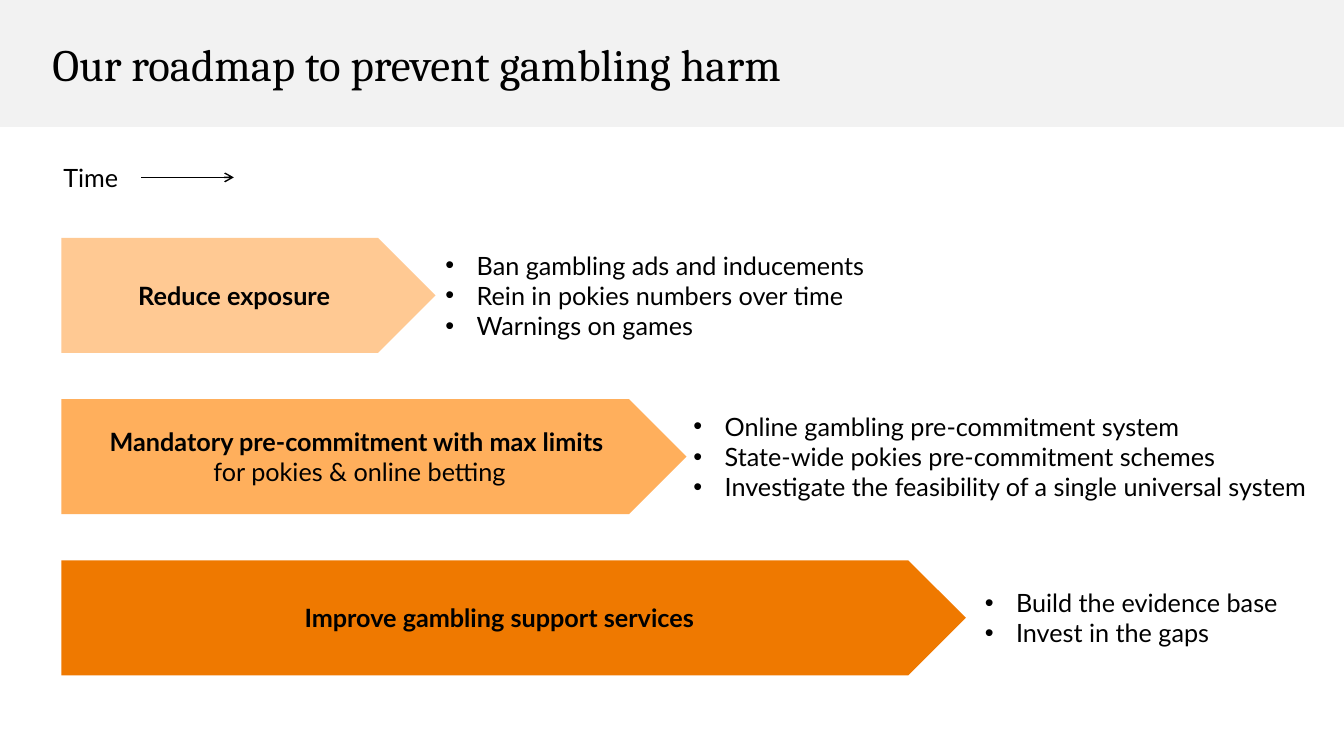
from dataclasses import dataclass

from lxml.etree import SubElement
from pptx import Presentation
from pptx.dml.color import RGBColor
from pptx.enum.shapes import MSO_CONNECTOR, MSO_SHAPE
from pptx.enum.text import MSO_ANCHOR, PP_ALIGN
from pptx.oxml.ns import qn
from pptx.util import Inches, Pt


@dataclass(frozen=True)
class Theme:
    text: str = "000000"
    band: str = "F2F2F2"
    stages: tuple = ("FFC993", "FFAF5C", "EF7900")
    title_font: str = "Cambria"
    body_font: str = "Lato"
    title_size: int = 32
    body_size: int = 18


THEME = Theme()

# Arrow width, gap before the actions, actions width, label lines, actions
STAGES = [
    (3.71, 0, 4.7, ["Reduce exposure"],
     ["Ban gambling ads and inducements",
      "Rein in pokies numbers over time",
      "Warnings on games"]),
    (6.2, -0.03, 6.56,
     ["Mandatory pre-commitment with max limits ", "for pokies & online betting"],
     ["Online gambling pre-commitment system",
      "State-wide pokies pre-commitment schemes",
      "Investigate the feasibility of a single universal system"]),
    (8.97, 0.09, 3.26, ["Improve gambling support services"],
     ["Build the evidence base", "Invest in the gaps"]),
]
ROW_TOP, ROW_PITCH, ROW_HEIGHT = 2.36, 1.6, 1.14
LINE_HEIGHT, BULLET_INDENT = 0.3, 0.31


def style(p, bold=False, size=THEME.body_size, name=THEME.body_font):
    for r in p.runs:
        r.font.size, r.font.name, r.font.bold = Pt(size), name, bold
        r.font.color.rgb = RGBColor.from_string(THEME.text)


def add_filled(slide, kind, box, color):
    sp = slide.shapes.add_shape(kind, *map(Inches, box))
    sp.shadow.inherit = False
    sp.fill.solid()
    sp.fill.fore_color.rgb = RGBColor.from_string(color)
    sp.line.fill.background()
    return sp


def add_text(slide, box, lines):
    tf = slide.shapes.add_textbox(*map(Inches, box)).text_frame
    tf.word_wrap = True
    tf.text = "\n".join(lines)
    return tf


def add_bullet(p):
    pPr = p._p.get_or_add_pPr()
    pPr.set("marL", str(Inches(BULLET_INDENT)))
    pPr.set("indent", str(-Inches(BULLET_INDENT)))
    SubElement(pPr, qn("a:buFont")).set("typeface", "Arial")
    SubElement(pPr, qn("a:buChar")).set("char", "•")


def header(slide, x, y, w, h):
    # Band behind the title
    band = add_filled(slide, MSO_SHAPE.RECTANGLE, (x, y, w, h), THEME.band)
    slide.shapes._spTree.insert(2, band._element)

    # Title
    sp = slide.shapes.title
    sp.left, sp.top = Inches(x + 0.42), Inches(y + 0.37)
    sp.width, sp.height = Inches(10.54), Inches(0.59)
    tf = sp.text_frame
    tf.text = "Our roadmap to prevent gambling harm"
    tf.vertical_anchor = MSO_ANCHOR.MIDDLE
    p = tf.paragraphs[0]
    p.alignment, p.line_spacing = PP_ALIGN.LEFT, 0.9
    style(p, size=THEME.title_size, name=THEME.title_font)


def time_axis(slide, x, y, w, h):
    tf = add_text(slide, (x, y, w, h), ["Time"])
    style(tf.paragraphs[0])

    # Direction of time
    mid = Inches(y + 0.2)
    line = slide.shapes.add_connector(
        MSO_CONNECTOR.STRAIGHT, Inches(x + 0.87), mid, Inches(x + 1.79), mid)
    line.line.color.rgb = RGBColor.from_string(THEME.text)
    line.line.width = Pt(1)
    SubElement(line.line._get_or_add_ln(), qn("a:tailEnd")).set("type", "arrow")
    SubElement(line._element.spPr, qn("a:effectLst"))


def stage_row(slide, x, y, h, stage, color):
    arrow_w, gap, actions_w, label, actions = stage

    # Stage arrow, first label line bold
    sp = add_filled(slide, MSO_SHAPE.PENTAGON, (x, y, arrow_w, h), color)
    tf = sp.text_frame
    tf.word_wrap = True
    tf.vertical_anchor = MSO_ANCHOR.MIDDLE
    tf.text = "\n".join(label)
    for i, p in enumerate(tf.paragraphs):
        p.alignment = PP_ALIGN.CENTER
        style(p, bold=i == 0)

    # Actions, centred on the arrow tip
    actions_h = len(actions) * LINE_HEIGHT + 0.1
    box = (x + arrow_w + gap, y + (h - actions_h) / 2, actions_w, actions_h)
    for p in add_text(slide, box, actions).paragraphs:
        add_bullet(p)
        style(p)


def main():
    prs = Presentation()
    prs.slide_width, prs.slide_height = Inches(13.33), Inches(7.5)
    slide = prs.slides.add_slide(prs.slide_layouts[5])
    header(slide, 0, 0, 13.33, 1.26)
    time_axis(slide, 0.53, 1.56, 12.47, 0.34)
    for i, (stage, color) in enumerate(zip(STAGES, THEME.stages)):
        stage_row(slide, 0.61, ROW_TOP + i * ROW_PITCH, ROW_HEIGHT, stage, color)
    prs.save("out.pptx")


if __name__ == "__main__":
    main()
